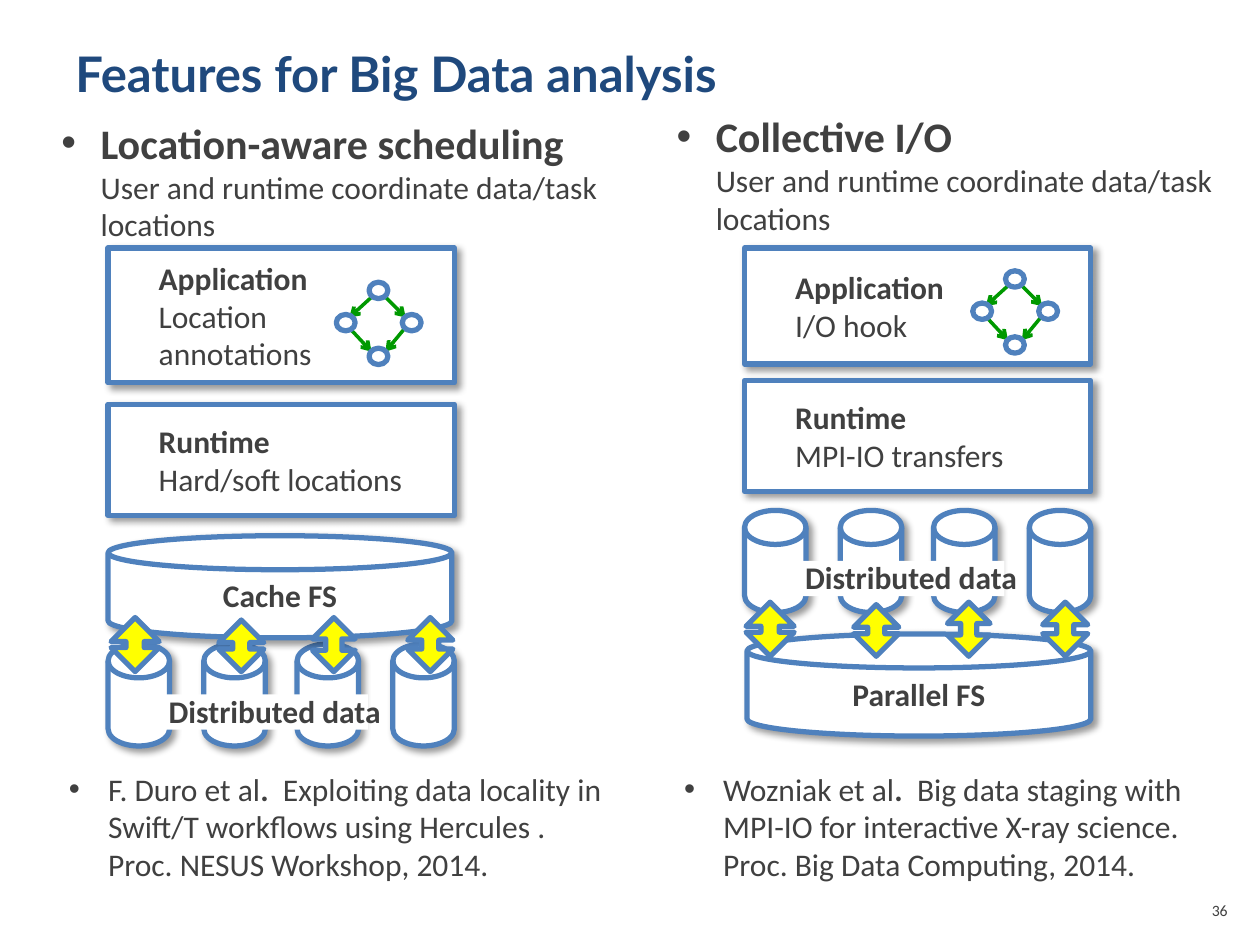
import lxml.etree
import pptx
import pptx.dml.color
import pptx.enum.shapes
import pptx.enum.text
import pptx.oxml
import pptx.oxml.ns
import pptx.util

Cm = pptx.util.Cm
Pt = pptx.util.Pt
SHAPE = pptx.enum.shapes.MSO_SHAPE
ALIGN = pptx.enum.text.PP_ALIGN
qn = pptx.oxml.ns.qn

COLOURS = {"title": "1F497D", "text": "404040", "outline": "4F81BD",
           "paper": "FFFFFF", "transfer": "FFFF00", "edge": "009900", "shadow": "000000"}

# Offsets in cm within a column
DISK_OFFSETS = [0, 1.93, 3.81, 5.74]
TRANSFERS = [(0, 0, 0.97), (2.17, 0.05, 0.91), (4.06, 0, 0.86), (5.98, 0, 0.91)]
TASK_NODES = [(0, 0.65), (0.66, 0), (1.33, 0.65), (0.66, 1.33)]
TASK_EDGES = [(0.71, 0.3, 0.26, 0.71), (0.99, 0.3, 1.4, 0.71),
              (1.37, 0.94, 0.99, 1.4), (0.3, 0.96, 0.71, 1.4)]


class Deck:
    """Holds the style and the current slide; lengths are given in cm."""

    def __init__(self):
        self.presentation = pptx.Presentation()
        self.presentation.slide_width = Cm(25.4)
        self.presentation.slide_height = Cm(19.05)
        self.slide = self.presentation.slides.add_slide(self.presentation.slide_layouts[6])

    def colour(self, name):
        return pptx.dml.color.RGBColor.from_string(COLOURS[name])

    def add_runs(self, paragraph, parts, colour="text", font="Calibri"):
        """Parts are (text, size, bold); a newline in the text is a line break."""
        for text, size, bold in parts:
            for index, line in enumerate(text.split("\n")):
                if index:
                    paragraph.add_line_break()
                if line:
                    run = paragraph.add_run()
                    run.text = line
                    run.font.name = font
                    run.font.size = Pt(size)
                    run.font.bold = bold
                    run.font.color.rgb = self.colour(colour)

    def text(self, left, top, width, height, parts, bullet=False, wrap=True,
             align=ALIGN.LEFT, **style):
        box = self.slide.shapes.add_textbox(Cm(left), Cm(top), Cm(width), Cm(height))
        box.text_frame.word_wrap = wrap
        paragraph = box.text_frame.paragraphs[0]
        paragraph.alignment = align
        if bullet:
            properties = paragraph._p.get_or_add_pPr()
            properties.set("marL", str(Cm(0.79)))
            properties.set("indent", str(-Cm(0.79)))
            lxml.etree.SubElement(properties, qn("a:buFont"), typeface="Arial")
            lxml.etree.SubElement(properties, qn("a:buChar"), char="•")
        self.add_runs(paragraph, parts, **style)

    def shape(self, kind, left, top, width, height, fill="paper", outlined=True, shadow=False):
        shape = self.slide.shapes.add_shape(kind, Cm(left), Cm(top), Cm(width), Cm(height))
        shape.shadow.inherit = False
        if fill:
            shape.fill.solid()
            shape.fill.fore_color.rgb = self.colour(fill)
        else:
            shape.fill.background()
        if outlined:
            shape.line.color.rgb = self.colour("outline")
            shape.line.width = Pt(3)
        else:
            shape.line.fill.background()
        if shadow:
            self.drop_shadow(shape)
        return shape

    def drop_shadow(self, shape):
        effects = shape._element.spPr.find(qn("a:effectLst"))
        outer = lxml.etree.SubElement(effects, qn("a:outerShdw"), blurRad=str(Pt(4)),
                                      dist=str(Pt(3)), dir="2700000", rotWithShape="0")
        tint = lxml.etree.SubElement(outer, qn("a:srgbClr"), val=COLOURS["shadow"])
        lxml.etree.SubElement(tint, qn("a:alpha"), val="40000")

    def layer(self, left, top, height, name, detail):
        box = self.shape(SHAPE.RECTANGLE, left, top, 6.98, height, shadow=True)
        frame = box.text_frame
        frame.word_wrap = True
        frame.margin_left = Cm(1.02)
        frame.vertical_anchor = pptx.enum.text.MSO_ANCHOR.MIDDLE
        frame.paragraphs[0].alignment = ALIGN.LEFT
        self.add_runs(frame.paragraphs[0], [(name + "\n", 18, True), (detail, 18, False)])

    def disk(self, left, top, width, name=""):
        disk = self.shape(SHAPE.FLOWCHART_MAGNETIC_DISK, left, top, width, 2.06, shadow=True)
        if name:
            disk.text_frame.vertical_anchor = pptx.enum.text.MSO_ANCHOR.MIDDLE
            disk.text_frame.paragraphs[0].alignment = ALIGN.CENTER
            self.add_runs(disk.text_frame.paragraphs[0], [(name, 18, True)])

    def transfer(self, left, top, width, height):
        arrow = self.shape(SHAPE.UP_DOWN_ARROW, left, top, width, height, fill="transfer")
        arrow.adjustments[0] = 0.34
        arrow.adjustments[1] = 0.38

    def edge(self, x1, y1, x2, y2):
        edge = self.slide.shapes.add_connector(
            pptx.enum.shapes.MSO_CONNECTOR.STRAIGHT, Cm(x1), Cm(y1), Cm(x2), Cm(y2))
        edge.line.color.rgb = self.colour("edge")
        edge.line.width = Pt(2)
        lxml.etree.SubElement(edge.line._get_or_add_ln(), qn("a:tailEnd"), type="arrow")
        lxml.etree.SubElement(edge._element.spPr, qn("a:effectLst"))

    def task_graph(self, left, top):
        for x1, y1, x2, y2 in TASK_EDGES:
            self.edge(left + x1, top + y1, left + x2, top + y2)
        for x, y in TASK_NODES:
            self.shape(SHAPE.OVAL, left + x, top + y, 0.38, 0.33, fill=None)

    def distributed_data(self, left, top):
        for offset in DISK_OFFSETS:
            self.disk(left + offset, top, 1.24)
        self.shape(SHAPE.RECTANGLE, left + 0.97, top + 1.02, 4.27, 0.71, outlined=False)
        self.text(left + 0.97, top + 0.84, 4.78, 1.02, [("Distributed data", 18, True)],
                  wrap=False)

    def column(self, left, heading, application, graph, runtime, data_top,
               file_system, transfers, reference):
        # Heading
        heading_left, heading_top, feature = heading
        self.text(heading_left, heading_top, 11.43, 2.82,
                  [(feature + "\n", 24, True),
                   ("User and runtime coordinate data/task locations", 18, False)], bullet=True)
        # Software layers
        self.layer(left, 5, application[0], "Application", application[1])
        self.task_graph(*graph)
        self.layer(left, runtime[0], 2.24, "Runtime", runtime[1])
        # Storage
        self.distributed_data(left, data_top)
        fs_left, fs_top, fs_name = file_system
        self.disk(fs_left, fs_top, 6.93, fs_name)
        for offset, drop, width in TRANSFERS:
            self.transfer(transfers[0] + offset, transfers[1] + drop, width, 1.09 - drop)
        # Reference
        reference_left, authors, work = reference
        self.text(reference_left, 15.39, 11.63, 2.57,
                  [(authors, 18, False), (".  ", 18, True), (work, 18, False)], bullet=True)


def main():
    deck = Deck()
    deck.text(1.27, 0.76, 22.86, 3.18, [("Features for Big Data analysis", 28, True)],
              colour="title", font="Lato")
    deck.column(
        2.18,
        heading=(0.99, 2.24, "Location-aware scheduling"),
        application=(2.72, "Location\nannotations"),
        graph=(6.78, 5.69),
        runtime=(8.15, "Hard/soft locations"),
        data_top=12.98,
        file_system=(2.18, 10.8, "Cache FS"),
        transfers=(2.24, 12.45),
        reference=(1.14, "F. Duro et al", "Exploiting data locality in Swift/T workflows "
                   "using Hercules .\nProc. NESUS Workshop, 2014."))
    deck.column(
        15.01,
        heading=(13.39, 2.11, "Collective I/O"),
        application=(2.34, "I/O hook"),
        graph=(19.61, 5.46),
        runtime=(7.67, "MPI-IO transfers"),
        data_top=10.29,
        file_system=(15.06, 12.78, "Parallel FS"),
        transfers=(15.04, 12.14),
        reference=(13.54, "Wozniak et al", "Big data staging with MPI-IO for interactive "
                   "X-ray science. Proc. Big Data Computing, 2014."))
    # Slide number
    deck.text(23.93, 18.03, 1.07, 1.02, [("36", 9, False)], align=ALIGN.RIGHT)
    deck.presentation.save("out.pptx")


if __name__ == "__main__":
    main()
